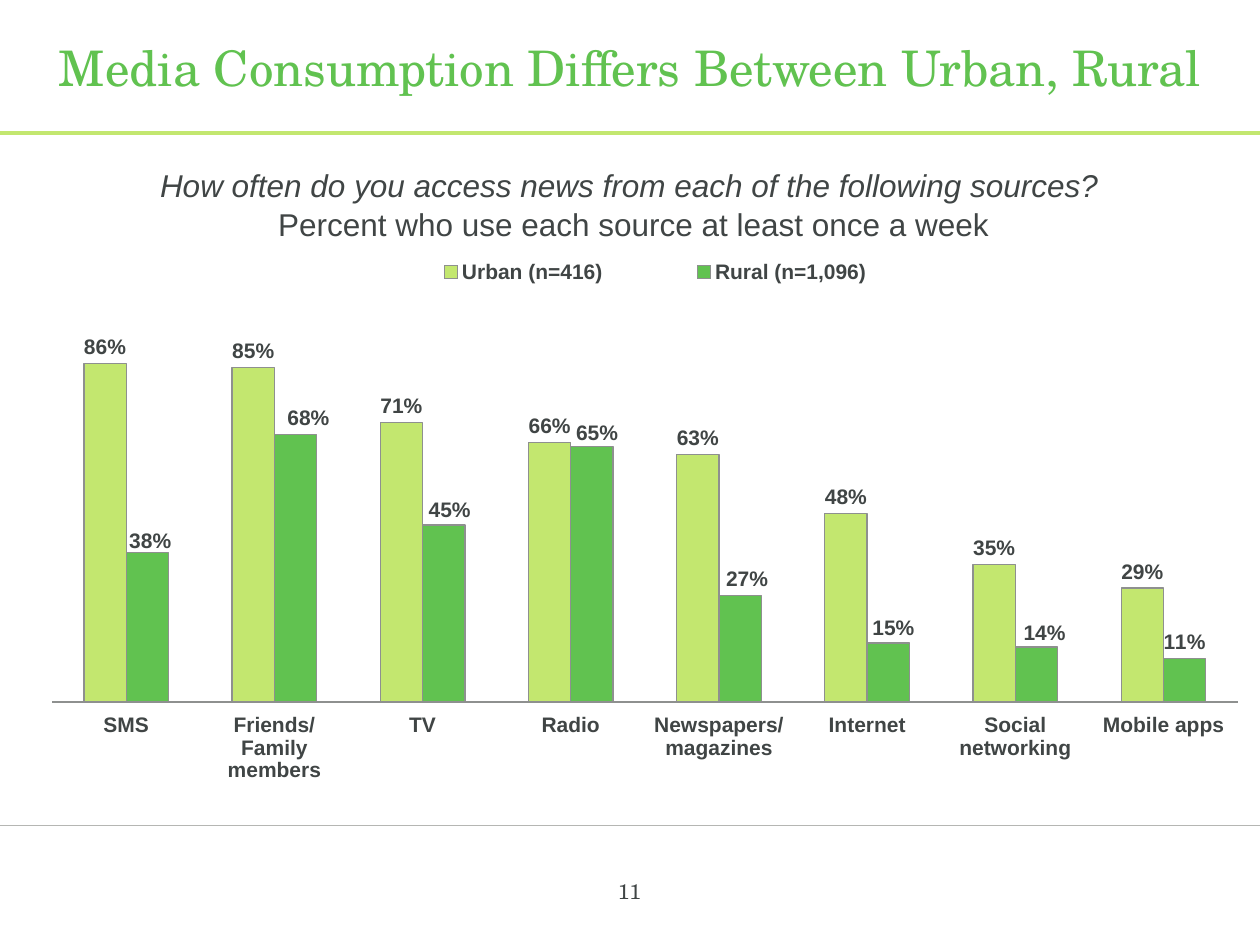
from lxml.etree import SubElement
from pptx import Presentation
from pptx.chart.data import CategoryChartData
from pptx.dml.color import RGBColor
from pptx.enum.chart import XL_CHART_TYPE as CT, XL_LABEL_POSITION as LP
from pptx.enum.chart import XL_LEGEND_POSITION as LEG, XL_TICK_LABEL_POSITION as TLP, XL_TICK_MARK as TM
from pptx.enum.shapes import MSO_CONNECTOR as CONN
from pptx.enum.text import MSO_ANCHOR as ANCHOR, PP_ALIGN as ALIGN
from pptx.oxml import parse_xml
from pptx.oxml.ns import nsdecls, qn
from pptx.util import Pt

COLORS = {"lime": "C3E76F", "green": "61C250", "text": "404545", "axis": "8E908F", "rule": "B5B6B3"}
SERIF, SANS = "TeX Gyre Schola", "Arial"
SOURCES = ["SMS", "Friends/ Family members", "TV", "Radio", "Newspapers/ magazines",
           "Internet", "Social networking", "Mobile apps"]
SERIES = [
    ("Urban (n=416)", "lime", [0.86, 0.85, 0.71, 0.66, 0.63, 0.48, 0.35, 0.29]),
    ("Rural (n=1,096)", "green", [0.38, 0.68, 0.45, 0.65, 0.27, 0.15, 0.14, 0.11]),
]
RURAL_LABEL_SHIFTS = [(1.7, -2.9 + 5.7), (7.4, 0), (3.4, 0.6), (2.9, 1.7), (4, 0), (2.9, 0.6), (4.6, 1.1)]


def rgb(name):
    return RGBColor.from_string(COLORS[name])


def style_font(font, name, size, color, bold=False):
    font.name, font.size, font.bold = name, Pt(size), bold
    font.color.rgb = rgb(color)


def add_rule(s, y, width, color, weight):
    line = s.shapes.add_connector(CONN.STRAIGHT, 0, Pt(y), Pt(width), Pt(y))
    line.line.color.rgb = rgb(color)
    line.line.width = Pt(weight)
    SubElement(line._element.spPr, qn("a:effectLst"))


def add_text(s, box, text, font, size, color, align=ALIGN.CENTER, anchor=ANCHOR.TOP):
    tf = s.shapes.add_textbox(*map(Pt, box)).text_frame
    tf.word_wrap = True
    tf.vertical_anchor = anchor
    p = tf.paragraphs[0]
    p.text = text
    p.alignment = align
    for r in p.runs:
        style_font(r.font, font, size, color)
    return p


def add_question(s, box):
    p = add_text(s, box, "How often do you access news from each of the following sources? \v"
                 "Percent who use each source at least once a week", SANS, 18, "text")
    p.line_spacing = 1.05
    p.runs[0].font.italic = True


def manual_layout(x, y, w=None, h=None, inner=False):
    target = '<c:layoutTarget val="inner"/>' if inner else ""
    modes, size = "", ""
    if w is not None:
        modes = '<c:xMode val="edge"/><c:yMode val="edge"/>'
        size = f'<c:w val="{w}"/><c:h val="{h}"/>'
    return parse_xml(f'<c:layout {nsdecls("c")}><c:manualLayout>{target}{modes}'
                     f'<c:x val="{x:.4f}"/><c:y val="{y:.4f}"/>{size}</c:manualLayout></c:layout>')


def set_layout(element, after, layout):
    for old in element.findall(qn("c:layout")):
        element.remove(old)
    if after is None:
        element.insert(0, layout)
    else:
        element.find(qn(after)).addnext(layout)


def style_series(series, color):
    series.format.fill.solid()
    series.format.fill.fore_color.rgb = rgb(color)
    series.format.line.color.rgb = rgb("axis")
    series.format.line.width = Pt(0.75)
    labels = series.data_labels
    labels.show_value = True
    labels.number_format, labels.number_format_is_linked = "0%", False
    labels.position = LP.OUTSIDE_END
    style_font(labels.font, SANS, 12, "text", True)


def shift_labels(series, shifts, width, height):
    for i, (dx, dy) in enumerate(shifts):
        label = series.points[i].data_label
        label.position = LP.OUTSIDE_END
        style_font(label.font, SANS, 12, "text", True)
    for dlbl, (dx, dy) in zip(series._element.iter(qn("c:dLbl")), shifts):
        set_layout(dlbl, "c:idx", manual_layout(dx / width, dy / height))


def add_news_chart(s, box):
    data = CategoryChartData(number_format="0%")
    data.categories = SOURCES
    for name, color, values in SERIES:
        data.add_series(name, values)
    chart = s.shapes.add_chart(CT.COLUMN_CLUSTERED, *map(Pt, box), data).chart
    chart.has_title = False
    style_font(chart.font, SANS, 12, "text", True)

    plot = chart.plots[0]
    plot.gap_width, plot.overlap, plot.vary_by_categories = 150, 0, False
    for series, (name, color, values) in zip(plot.series, SERIES):
        style_series(series, color)
    shift_labels(plot.series[1], RURAL_LABEL_SHIFTS, box[2], box[3])

    cat, val = chart.category_axis, chart.value_axis
    cat.major_tick_mark = cat.minor_tick_mark = TM.NONE
    cat.tick_label_position = TLP.LOW
    cat.format.line.color.rgb = rgb("axis")
    cat.format.line.width = Pt(1.5)
    val.minimum_scale, val.maximum_scale, val.major_unit = 0, 1, 0.2
    val.has_major_gridlines = False
    val.tick_labels.number_format, val.tick_labels.number_format_is_linked = "0%", False
    val.visible = False

    chart.has_legend = True
    chart.legend.position = LEG.TOP
    chart.legend.include_in_layout = False
    style_font(chart.legend.font, SANS, 12, "text", True)
    set_layout(chart.legend._element, "c:legendPos", manual_layout(0.35, 0.01, 0.43, 0.05))
    plot_area = chart._chartSpace.chart.plotArea
    set_layout(plot_area, None, manual_layout(0.131, 0.099, 0.853, 0.688, inner=True))


def main():
    prs = Presentation()
    prs.slide_width, prs.slide_height = Pt(720), Pt(540)
    s = prs.slides.add_slide(prs.slide_layouts[6])
    add_rule(s, 471.6, 720, "rule", 0.25)
    add_rule(s, 76, 720, "lime", 2.25)
    add_text(s, (26.6, 15.1, 673.9, 46.1), "Media Consumption Differs Between Urban, Rural",
             SERIF, 28, "green", ALIGN.LEFT, ANCHOR.MIDDLE)
    add_question(s, (26.6, 90, 671, 365))
    add_text(s, (275.8, 498.2, 167.8, 37.4), "11", SERIF, 12, "text")
    add_news_chart(s, (-74.2, 144, 794.2, 326.9))
    prs.save("out.pptx")


if __name__ == "__main__":
    main()
